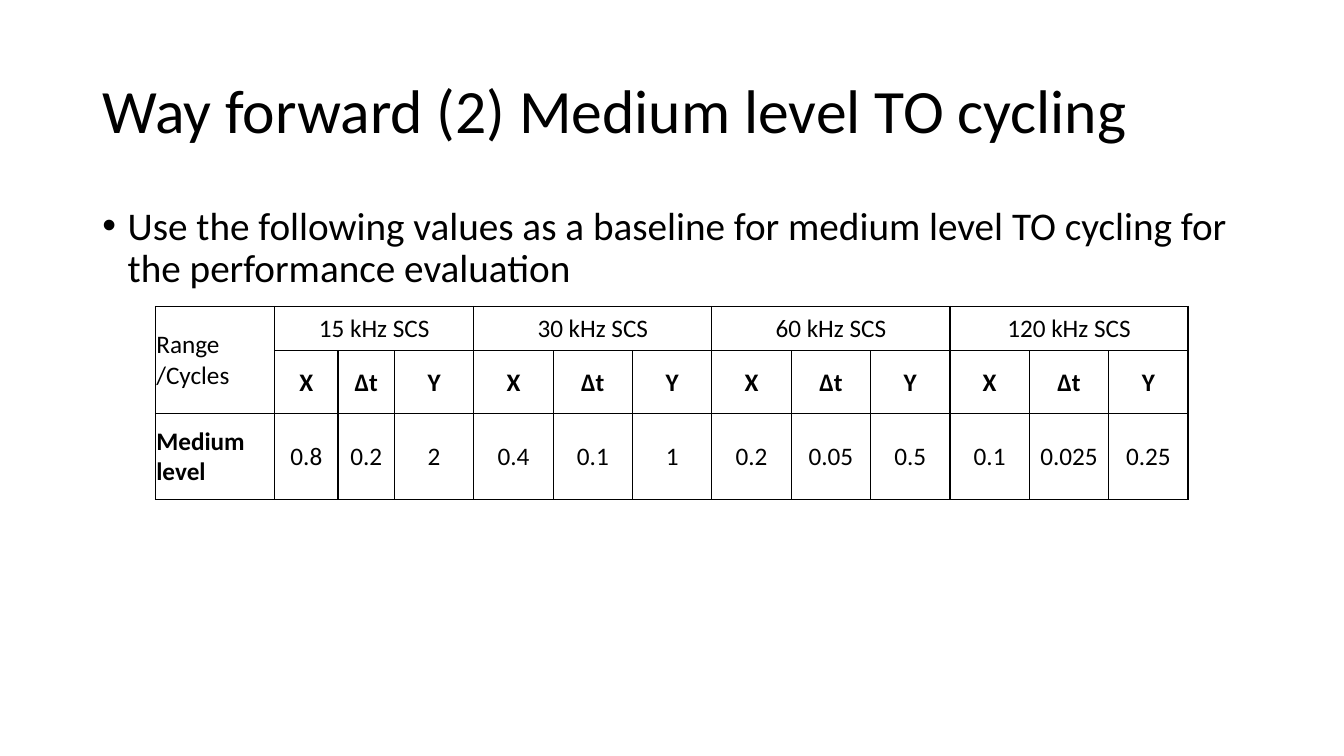
from lxml import etree
from pptx import Presentation
from pptx.dml.color import RGBColor
from pptx.enum.text import MSO_ANCHOR, MSO_AUTO_SIZE, PP_ALIGN
from pptx.oxml.ns import qn
from pptx.util import Cm, Pt

LEFT, CENTER = PP_ALIGN.LEFT, PP_ALIGN.CENTER
MIDDLE, TOP = MSO_ANCHOR.MIDDLE, MSO_ANCHOR.TOP
NO_AUTOFIT = MSO_AUTO_SIZE.NONE

BLACK = RGBColor(0x00, 0x00, 0x00)
WHITE = RGBColor(0xFF, 0xFF, 0xFF)
FONT = "Calibri"
TITLE_ONLY = 5

SPACINGS = ["15 kHz SCS", "30 kHz SCS", "60 kHz SCS", "120 kHz SCS"]
SYMBOLS = ["X", "∆t", "Y"]
MEDIUM_VALUES = ["0.8", "0.2", "2", "0.4", "0.1", "1",
                 "0.2", "0.05", "0.5", "0.1", "0.025", "0.25"]
COLUMN_WIDTHS = [3, 1.6, 1.42] + [2] * 10
ROW_HEIGHTS = [1.12, 1.12, 2.18]


def write(frame, text, size=18, bold=False, align=LEFT, line_spacing=None, bullet=False):
    """Fill a text frame with one formatted paragraph."""
    paragraph = frame.paragraphs[0]
    paragraph.text = text
    paragraph.alignment = align
    if line_spacing:
        paragraph.line_spacing = line_spacing
    if bullet:
        properties = paragraph._p.get_or_add_pPr()
        properties.set("marL", str(Cm(0.64)))
        properties.set("indent", str(-Cm(0.64)))
        etree.SubElement(properties, qn("a:buFont"), typeface="Arial")
        etree.SubElement(properties, qn("a:buChar"), char="•")
    font = paragraph.runs[0].font
    font.name, font.size, font.bold = FONT, Pt(size), bold
    font.color.rgb = BLACK


def prepare_frame(shape, anchor):
    frame = shape.text_frame
    frame.word_wrap = True
    frame.auto_size = NO_AUTOFIT
    frame.vertical_anchor = anchor
    return frame


def add_title(slide, text):
    title = slide.shapes.title
    title.left, title.top, title.width, title.height = Cm(2.33), Cm(1.01), Cm(29.21), Cm(3.68)
    write(prepare_frame(title, MIDDLE), text, size=44, line_spacing=0.9)


def add_bullet(slide, text):
    statement = slide.shapes.add_textbox(Cm(2.33), Cm(5.07), Cm(29.21), Cm(3.02))
    write(prepare_frame(statement, TOP), text, size=28, line_spacing=0.9, bullet=True)


def style_cell(cell):
    """Give a cell thin margins, a black outline and a white fill."""
    cell.margin_left = cell.margin_right = cell.margin_top = Cm(0.02)
    cell.margin_bottom = 0
    cell.vertical_anchor = MIDDLE
    properties = cell._tc.get_or_add_tcPr()
    for side in ("a:lnL", "a:lnR", "a:lnT", "a:lnB"):
        line = etree.SubElement(properties, qn(side), w=str(Pt(1)))
        line_fill = etree.SubElement(line, qn("a:solidFill"))
        etree.SubElement(line_fill, qn("a:srgbClr"), val=str(BLACK))
    cell.fill.solid()
    cell.fill.fore_color.rgb = WHITE


def add_cycling_table(slide):
    table = slide.shapes.add_table(
        len(ROW_HEIGHTS), len(COLUMN_WIDTHS), Cm(3.92), Cm(7.72),
        Cm(sum(COLUMN_WIDTHS)), Cm(sum(ROW_HEIGHTS))).table
    table.first_row = table.horz_banding = False
    for column, width in zip(table.columns, COLUMN_WIDTHS):
        column.width = Cm(width)
    for row, height in zip(table.rows, ROW_HEIGHTS):
        row.height = Cm(height)
    for cell in table.iter_cells():
        style_cell(cell)

    # Row labels
    table.cell(0, 0).merge(table.cell(1, 0))
    write(table.cell(0, 0).text_frame, "Range /Cycles")
    write(table.cell(2, 0).text_frame, "Medium level", bold=True)

    # Subcarrier spacing headings
    group = len(SYMBOLS)
    for index, spacing in enumerate(SPACINGS):
        first = 1 + index * group
        table.cell(0, first).merge(table.cell(0, first + group - 1))
        write(table.cell(0, first).text_frame, spacing, align=CENTER)

    # Symbols and their values
    for column, (symbol, value) in enumerate(zip(SYMBOLS * len(SPACINGS), MEDIUM_VALUES), 1):
        write(table.cell(1, column).text_frame, symbol, bold=True, align=CENTER)
        write(table.cell(2, column).text_frame, value, align=CENTER)


def main():
    deck = Presentation()
    deck.slide_width, deck.slide_height = Cm(33.87), Cm(19.05)
    slide = deck.slides.add_slide(deck.slide_layouts[TITLE_ONLY])
    add_title(slide, "Way forward (2) Medium level TO cycling")
    add_bullet(slide, "Use the following values as a baseline for medium level TO cycling "
                      "for the performance evaluation")
    add_cycling_table(slide)
    deck.save("out.pptx")


if __name__ == "__main__":
    main()
